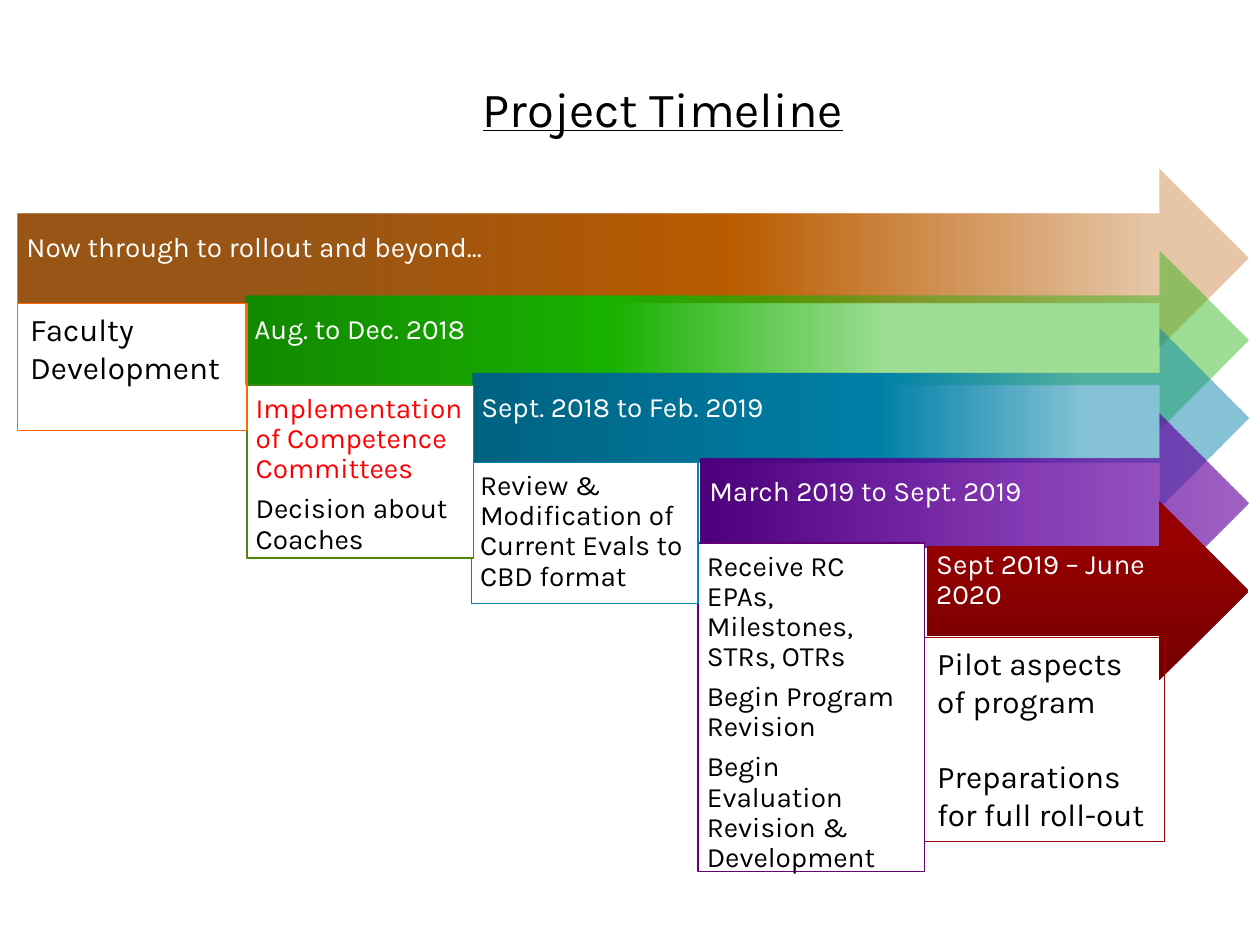
from lxml.etree import SubElement
from pptx import Presentation
from pptx.dml.color import RGBColor
from pptx.enum.shapes import MSO_SHAPE as Preset
from pptx.enum.text import MSO_ANCHOR as Anchor, PP_ALIGN as Align
from pptx.oxml.ns import qn
from pptx.util import Inches, Pt

COLORS = {
    "white": "FFFFFF", "black": "000000", "red": "FF0000",
    "faculty": "FF6600", "committee": "508709", "review": "0083AE",
    "revision": "660075", "pilot": "9C0001",
}
ARROW_TIP, ARROW_HEIGHT = 9.91, 1.42
SMALL_INSETS = (0.07, 0.07, 0.07, 0.07)
LABEL_INSETS = (0.07, 0.07, 0.28, 0.23)
WIDE_INSETS = (0.1, 0.05, 0.1, 0.05)

PERIODS = [
    ("Now through to rollout and beyond...", 0.14, 1.34, 0,
     [(23, "8F4600", 91), (58, "BA5C00", 100), (92, "B95B00", 34)]),
    ("Aug. to Dec. 2018", 1.95, 1.99, 0,
     [(0, "128800", 100), (36, "18B100", 100), (64, "17B100", 41)]),
    ("Sept. 2018 to Feb. 2019", 3.75, 2.61, 0,
     [(0, "006281", 100), (52, "007FA8", 100), (79, "0080A9", 47)]),
    ("March 2019 to Sept. 2019", 5.56, 3.28, 0,
     [(0, "4C007B", 100), (62, "6300A0", 76), (100, "6300A0", 61)]),
    ("Sept 2019 – June 2020", 7.36, 3.98, 270,
     [(0, "740001", 100), (80, "970001", 100), (100, "980001", 100)]),
]

SMALL_TEXT = {"size": 16, "spacing": 0.9, "after": 5.6, "insets": SMALL_INSETS}
WIDE_TEXT = {"size": 18, "insets": WIDE_INSETS}
TASKS = [
    ("faculty", (0.14, 2.41, 1.82, 1.01), False, ["Faculty Development"], WIDE_TEXT),
    ("committee", (1.96, 3.06, 1.8, 1.37), True,
     ["Implementation of Competence Committees", "Decision about Coaches"],
     {**SMALL_TEXT, "colors": ["red", "black"]}),
    ("review", (3.74, 3.67, 1.8, 1.12), True,
     ["Review & Modification of Current Evals to CBD format"], SMALL_TEXT),
    ("revision", (5.54, 4.31, 1.8, 2.61), True,
     ["Receive RC EPAs, Milestones, STRs, OTRs", "Begin Program Revision",
      "Begin Evaluation Revision & Development"], SMALL_TEXT),
    ("pilot", (7.34, 5.06, 1.9, 1.62), False,
     ["Pilot aspects of program", "Preparations for full roll-out"],
     {**WIDE_TEXT, "gap": 21.6}),
]


def write_text(holder, lines, size=16, colors=("black",), align=Align.LEFT,
               anchor=Anchor.TOP, insets=WIDE_INSETS, spacing=1.0, after=0,
               gap=0, underline=False):
    """Fill a shape with formatted paragraphs, one per line of content."""
    frame = holder.text_frame
    frame.word_wrap = True
    frame.vertical_anchor = anchor
    (frame.margin_left, frame.margin_top,
     frame.margin_right, frame.margin_bottom) = map(Inches, insets)
    for index, line in enumerate(lines):
        paragraph = frame.add_paragraph() if index else frame.paragraphs[0]
        paragraph.alignment = align
        paragraph.line_spacing = spacing
        paragraph.space_before = Pt(gap if index else 0)
        paragraph.space_after = Pt(after)
        run = paragraph.add_run()
        run.text = line
        run.font.name = "Karla"
        run.font.size = Pt(size)
        run.font.underline = underline
        color = COLORS[colors[index % len(colors)]]
        run.font.color.rgb = RGBColor.from_string(color)


def fill_gradient(shape, stops, angle):
    """Give a shape a linear gradient with per-stop opacity."""
    shape.fill.gradient()
    gradient = shape._element.spPr.find(qn("a:gradFill"))
    for child in list(gradient):
        gradient.remove(child)
    stop_list = SubElement(gradient, qn("a:gsLst"))
    for position, color, opacity in stops:
        stop = SubElement(stop_list, qn("a:gs"), pos=str(position * 1000))
        tint = SubElement(stop, qn("a:srgbClr"), val=color)
        SubElement(tint, qn("a:alpha"), val=str(opacity * 1000))
    SubElement(gradient, qn("a:lin"), ang=str(angle * 60000), scaled="0")


def add_period(slide, label, left, top, angle, stops):
    """Add a labelled arrow that runs from its start to the common tip."""
    arrow = slide.shapes.add_shape(
        Preset.RIGHT_ARROW, Inches(left), Inches(top),
        Inches(ARROW_TIP - left), Inches(ARROW_HEIGHT))
    arrow.shadow.inherit = False
    arrow.line.fill.background()
    fill_gradient(arrow, stops, angle)
    write_text(arrow, [label], colors=["white"], anchor=Anchor.MIDDLE,
               insets=LABEL_INSETS, spacing=0.9, after=5.6)


def add_task(slide, outline, bounds, filled, lines, text_format):
    """Add an outlined box that lists the work of one period."""
    box = slide.shapes.add_shape(Preset.RECTANGLE, *map(Inches, bounds))
    box.shadow.inherit = False
    if filled:
        box.fill.solid()
        box.fill.fore_color.rgb = RGBColor.from_string(COLORS["white"])
    else:
        box.fill.background()
    box.line.color.rgb = RGBColor.from_string(COLORS[outline])
    box.line.width = Pt(0.75)
    write_text(box, lines, **text_format)


def add_title(slide, heading):
    """Place the heading in the title placeholder."""
    title = slide.shapes.title
    title.left, title.top = Inches(3.44), Inches(0.57)
    title.width, title.height = Inches(3.64), Inches(0.57)
    write_text(title, [heading], size=28, align=Align.CENTER, underline=True)


def main():
    """Build the project timeline slide."""
    deck = Presentation()
    deck.slide_width, deck.slide_height = Inches(10), Inches(7.5)
    slide = deck.slides.add_slide(deck.slide_layouts[5])
    add_title(slide, "Project Timeline")
    for period in PERIODS:
        add_period(slide, *period)
    for task in reversed(TASKS):
        add_task(slide, *task)
    deck.save("out.pptx")


if __name__ == "__main__":
    main()
